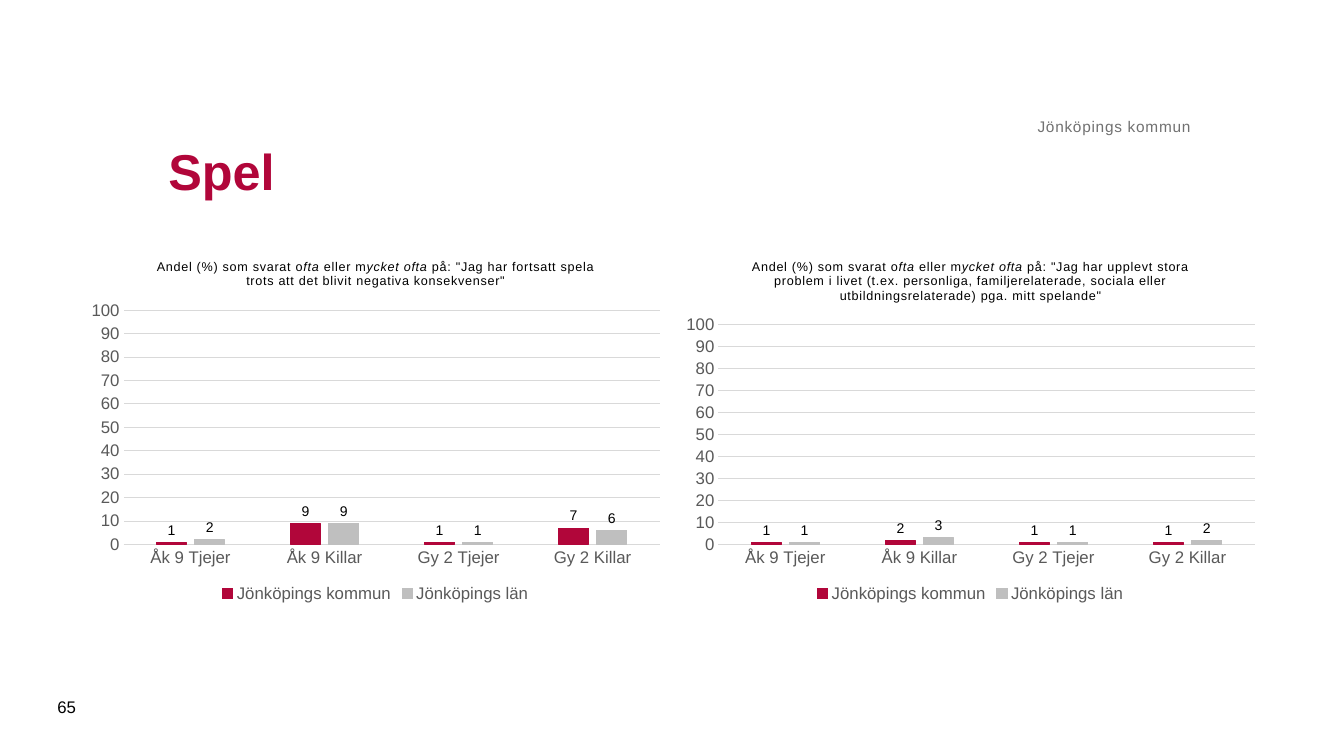
"""Build the slide "Spel" with two column charts for Jönköpings kommun."""
from pptx import Presentation
from pptx.chart.data import CategoryChartData
from pptx.dml.color import RGBColor
from pptx.enum.chart import XL_CHART_TYPE, XL_LABEL_POSITION, XL_LEGEND_POSITION, XL_TICK_MARK
from pptx.enum.text import MSO_ANCHOR, PP_ALIGN
from pptx.util import Inches, Pt

COLUMNS = XL_CHART_TYPE.COLUMN_CLUSTERED
OUTSIDE_END = XL_LABEL_POSITION.OUTSIDE_END
BOTTOM_LEGEND = XL_LEGEND_POSITION.BOTTOM
NO_TICK = XL_TICK_MARK.NONE
MIDDLE, BOTTOM = MSO_ANCHOR.MIDDLE, MSO_ANCHOR.BOTTOM
LEFT, RIGHT = PP_ALIGN.LEFT, PP_ALIGN.RIGHT

CRIMSON, SILVER, PALE, GREY, BLACK = "B1063A", "BFBFBF", "D9D9D9", "595959", "000000"
NUMBER_FORMAT = "#,##0;#,##0"
GROUPS = ["Åk 9 Tjejer", "Åk 9 Killar", "Gy 2 Tjejer", "Gy 2 Killar"]
REGIONS = {"Jönköpings kommun": CRIMSON, "Jönköpings län": SILVER}
QUESTIONS = [
    (0.79, "Jag har fortsatt spela trots att det blivit negativa konsekvenser",
     [(1, 9, 1, 7), (2, 9, 1, 6)]),
    (6.69, "Jag har upplevt stora problem i livet (t.ex. personliga, familjerelaterade, "
           "sociala eller utbildningsrelaterade) pga. mitt spelande",
     [(1, 2, 1, 1), (1, 3, 1, 2)]),
]


def style_font(font, size, color, bold=False):
    font.name = "Arial"
    font.size = Pt(size)
    font.bold = bold
    font.color.rgb = RGBColor.from_string(color)


def style_line(line, color):
    line.color.rgb = RGBColor.from_string(color)
    line.width = Pt(0.75)


prs = Presentation()
prs.slide_width, prs.slide_height = Inches(13.33), Inches(7.5)
slide = prs.slides.add_slide(prs.slide_layouts[5])

for left, question, shares in QUESTIONS:
    answers = CategoryChartData(number_format=NUMBER_FORMAT)
    answers.categories = GROUPS
    for region, values in zip(REGIONS, shares):
        answers.add_series(region, values)
    chart = slide.shapes.add_chart(
        COLUMNS, Inches(left), Inches(2.4), Inches(5.87), Inches(3.62), answers).chart
    style_font(chart.font, 10, BLACK)

    heading = chart.chart_title.text_frame.paragraphs[0]
    style_font(heading.font, 9, BLACK)
    chart.chart_title.include_in_layout = False
    for words, italic in [("Andel (%) som svarat o", False), ("fta", True), (" eller m", False),
                          ("ycket ofta", True), (f' på: "{question}"', False)]:
        run = heading.add_run()
        run.text = words
        style_font(run.font, 9, BLACK)
        run.font.italic = italic
        run._r.get_or_add_rPr().set("spc", "50")

    chart.has_legend = True
    chart.legend.position = BOTTOM_LEGEND
    chart.legend.include_in_layout = False
    style_font(chart.legend.font, 12, GREY)

    for axis in (chart.category_axis, chart.value_axis):
        axis.major_tick_mark = axis.minor_tick_mark = NO_TICK
        style_font(axis.tick_labels.font, 12, GREY)
    style_line(chart.category_axis.format.line, PALE)
    percent_axis = chart.value_axis
    percent_axis.minimum_scale, percent_axis.maximum_scale = 0, 100
    percent_axis.major_unit = 10
    percent_axis.format.line.fill.background()
    percent_axis.tick_labels.number_format = NUMBER_FORMAT
    percent_axis.tick_labels.number_format_is_linked = False
    style_line(percent_axis.major_gridlines.format.line, PALE)

    plot = chart.plots[0]
    plot.gap_width, plot.overlap, plot.vary_by_categories = 219, -27, False
    for series, color in zip(plot.series, REGIONS.values()):
        series.format.fill.solid()
        series.format.fill.fore_color.rgb = RGBColor.from_string(color)
        style_line(series.format.line, color)
        labels = series.data_labels
        labels.show_value = True
        labels.position = OUTSIDE_END
        labels.number_format = NUMBER_FORMAT
        labels.number_format_is_linked = False
        style_font(labels.font, 10, BLACK)

title = slide.shapes.title
title.left, title.top, title.width, title.height = map(Inches, (1.57, 0.98, 10.24, 1.42))
title.text_frame.text = "Spel"
title.text_frame.vertical_anchor = MIDDLE
title.text_frame.paragraphs[0].alignment = LEFT
style_font(title.text_frame.paragraphs[0].font, 36, CRIMSON, bold=True)

municipality = slide.shapes.add_textbox(
    Inches(1.57), Inches(0.62), Inches(10.24), Inches(0.73)).text_frame
municipality.word_wrap = True
municipality.vertical_anchor = BOTTOM
municipality.margin_left = municipality.margin_right = 0
municipality.margin_top = municipality.margin_bottom = 0
municipality.text = "Jönköpings kommun"
municipality.paragraphs[0].alignment = RIGHT
style_font(municipality.paragraphs[0].font, 11, "717171")
municipality.paragraphs[0].runs[0]._r.get_or_add_rPr().set("spc", "50")

page_number = slide.shapes.add_textbox(
    Inches(0.47), Inches(6.81), Inches(0.57), Inches(0.4)).text_frame
page_number.word_wrap = True
page_number.vertical_anchor = MIDDLE
page_number.text = "65"
style_font(page_number.paragraphs[0].font, 12, BLACK)

prs.save("out.pptx")
